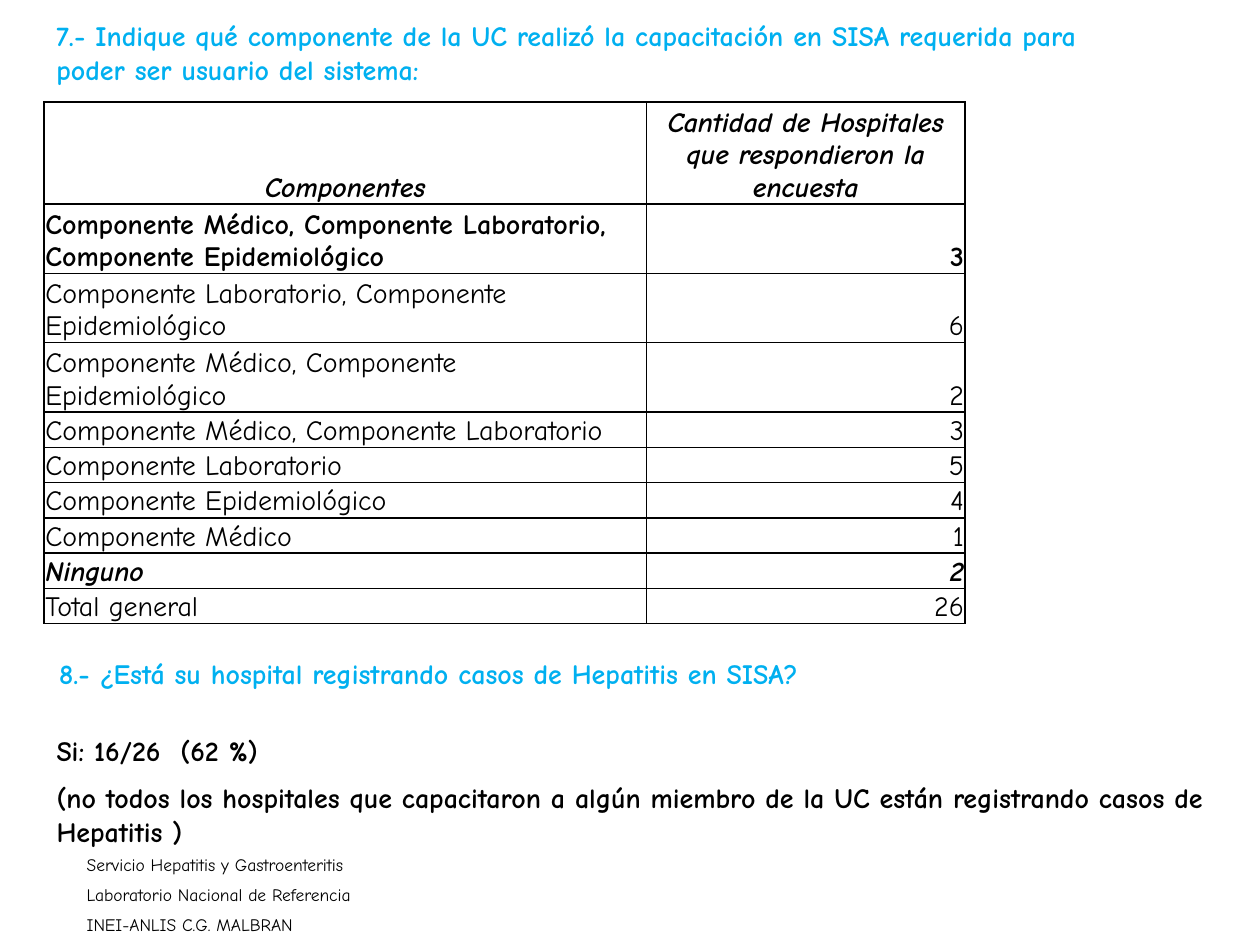
from lxml.etree import SubElement
from pptx import Presentation
from pptx.dml.color import RGBColor
from pptx.enum.text import MSO_ANCHOR as Anchor, PP_ALIGN as Align
from pptx.oxml.ns import qn
from pptx.util import Inches, Pt

FONT = "Comic Neue"
BLACK = RGBColor(0x00, 0x00, 0x00)
BLUE = RGBColor(0x00, 0xB0, 0xF0)

LINE_HEIGHT = 0.27
HEADERS = ("Componentes", "Cantidad de Hospitales que respondieron la encuesta")
# label, hospitals, lines of text, bold, italic
ANSWERS = [
    ("Componente Médico, Componente Laboratorio, Componente Epidemiológico", 3, 2, True, False),
    ("Componente Laboratorio, Componente Epidemiológico", 6, 2, False, False),
    ("Componente Médico, Componente Epidemiológico", 2, 2, False, False),
    ("Componente Médico, Componente Laboratorio", 3, 1, False, False),
    ("Componente Laboratorio", 5, 1, False, False),
    ("Componente Epidemiológico", 4, 1, False, False),
    ("Componente Médico", 1, 1, False, False),
    ("Ninguno", 2, 1, True, True),
    ("Total general", 26, 1, False, False),
]


def add_span(para, text, size=16, color=BLACK, bold=False, italic=False):
    span = para.add_run()
    span.text = text
    font = span.font
    font.name, font.size, font.color.rgb = FONT, Pt(size), color
    font.bold, font.italic = bold, italic


def add_text(page, left, top, width, height, lines, size=16, color=BLACK, bold=True):
    """Place one paragraph per line, half a line apart."""
    box = page.shapes.add_textbox(Inches(left), Inches(top), Inches(width), Inches(height))
    frame = box.text_frame
    frame.word_wrap = True
    for index, line in enumerate(lines):
        para = frame.paragraphs[0]
        if index:
            para = frame.add_paragraph()
            para.space_before = Pt(size / 2)
        add_span(para, line, size, color, bold)


def add_borders(cell):
    properties = cell._tc.get_or_add_tcPr()
    for side in ("lnL", "lnR", "lnT", "lnB"):
        line = SubElement(properties, qn(f"a:{side}"), w=str(Pt(1)))
        fill = SubElement(line, qn("a:solidFill"))
        SubElement(fill, qn("a:srgbClr"), val=str(BLACK))


def fill_cell(cell, text, align, bold, italic):
    add_borders(cell)
    cell.fill.background()
    cell.vertical_anchor = Anchor.BOTTOM
    cell.margin_left = cell.margin_right = cell.margin_top = Inches(0.01)
    cell.margin_bottom = 0
    para = cell.text_frame.paragraphs[0]
    para.alignment = align
    add_span(para, text, bold=bold, italic=italic)


def add_answers_table(page, left, top, width, height):
    frame = page.shapes.add_table(len(ANSWERS) + 1, 2, Inches(left), Inches(top),
                                  Inches(width), Inches(height))
    table = frame.table
    table.first_row = table.horz_banding = False
    table.columns[0].width = Inches(4.78)
    table.columns[1].width = Inches(width - 4.78)
    table.rows[0].height = Inches(3 * LINE_HEIGHT)
    for column, header in enumerate(HEADERS):
        fill_cell(table.cell(0, column), header, Align.CENTER, True, True)
    for row, (label, count, lines, bold, italic) in enumerate(ANSWERS, start=1):
        table.rows[row].height = Inches(lines * LINE_HEIGHT + 0.01)
        fill_cell(table.cell(row, 0), label, Align.LEFT, bold, italic)
        fill_cell(table.cell(row, 1), str(count), Align.RIGHT, bold, italic)


def build_survey_page(deck):
    page = deck.slides.add_slide(deck.slide_layouts[6])
    add_text(page, 0.59, 6.73, 3.5, 0.77, [
        "Servicio Hepatitis y Gastroenteritis",
        "Laboratorio Nacional de Referencia",
        "INEI-ANLIS C.G. MALBRAN",
    ], size=10, bold=False)
    add_answers_table(page, 0.35, 0.81, 7.31, 4.1)
    add_text(page, 0.35, 0.1, 8.9, 0.64, [
        "7.- Indique qué componente de la UC realizó la capacitación en SISA "
        "requerida para poder ser usuario del sistema:",
    ], color=BLUE)
    add_text(page, 0.35, 5.77, 9.31, 1.45, [
        "Si: 16/26  (62 %)",
        "(no todos los hospitales que capacitaron a algún miembro de la UC "
        "están registrando casos de Hepatitis )",
    ])
    add_text(page, 0.37, 5.16, 8.19, 0.37, [
        "8.- ¿Está su hospital registrando casos de Hepatitis en SISA?",
    ], color=BLUE)


def main():
    deck = Presentation()
    deck.slide_width, deck.slide_height = Inches(10), Inches(7.5)
    build_survey_page(deck)
    deck.save("out.pptx")


if __name__ == "__main__":
    main()
